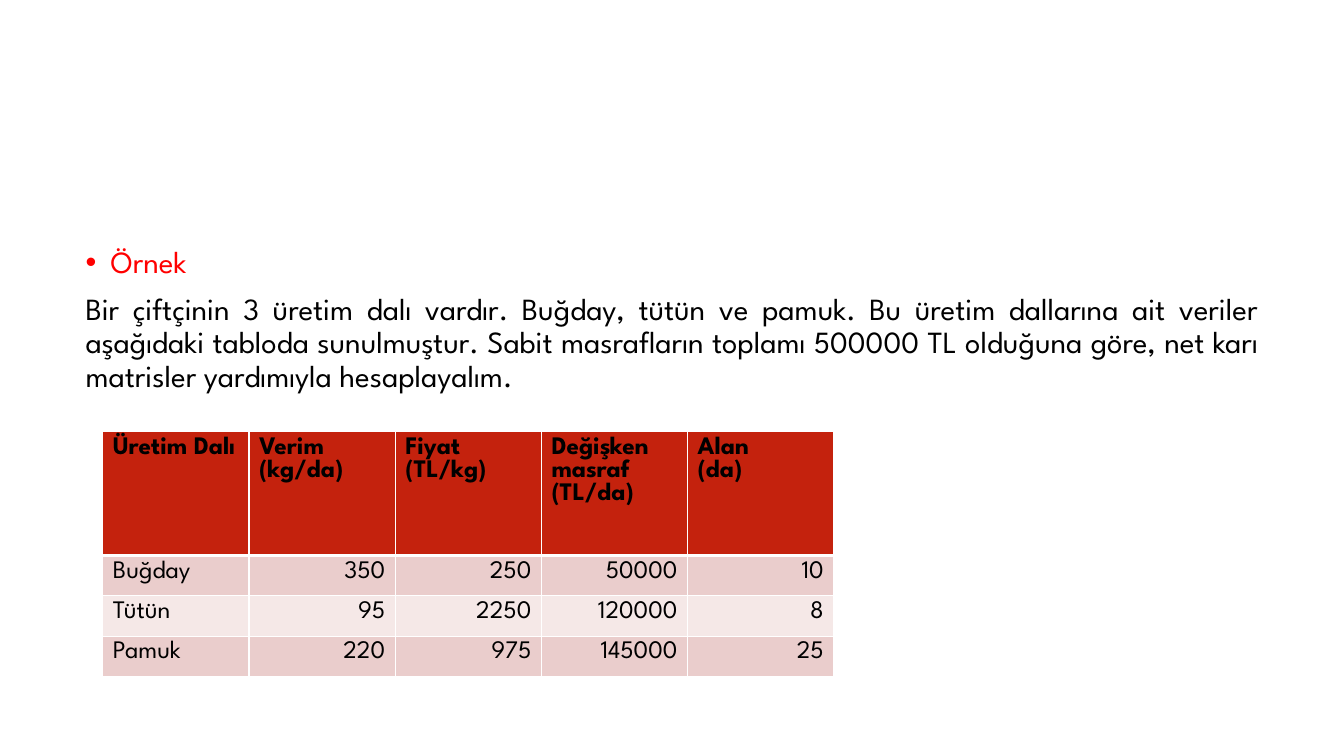
from lxml import etree
from pptx import Presentation
from pptx import util as u
from pptx.dml.color import RGBColor
from pptx.enum import text
from pptx.oxml.ns import qn

FONT = "League Spartan"
BLACK, RED, WHITE = "000000", "FF0000", "FFFFFF"
HEADER_FILL, BAND_FILLS = "C4220D", ("EACDCC", "F5E8E7")
COLUMN, HEADER_ROW, DATA_ROW = 1.45, 1.23, 0.4

PROBLEM = (
    "Bir çiftçinin 3 üretim dalı vardır. Buğday, tütün ve pamuk. "
    "Bu üretim dallarına ait veriler aşağıdaki tabloda sunulmuştur. "
    "Sabit masrafların toplamı 500000 TL olduğuna göre, net karı "
    "matrisler yardımıyla hesaplayalım."
)
FARM_DATA = [
    ["Üretim Dalı", "Verim\n(kg/da)", "Fiyat\n(TL/kg)",
     "Değişken masraf\n(TL/da)", "Alan\n(da)"],
    ["Buğday", "350", "250", "50000", "10"],
    ["Tütün", "95", "2250", "120000", "8"],
    ["Pamuk", "220", "975", "145000", "25"],
]


def color(value):
    return RGBColor.from_string(value)


def apply(target, settings):
    for name, value in settings.items():
        setattr(target, name, value)


def style_font(paragraph, size, ink=BLACK, bold=False):
    apply(paragraph.font, {"name": FONT, "size": u.Pt(size), "bold": bold})
    paragraph.font.color.rgb = color(ink)


def add_bullet(paragraph, indent):
    properties = paragraph._p.get_or_add_pPr()
    properties.set("marL", str(u.Inches(indent)))
    properties.set("indent", str(-u.Inches(indent)))
    font = etree.SubElement(properties, qn("a:buFont"))
    font.set("typeface", "Arial")
    etree.SubElement(properties, qn("a:buChar")).set("char", "•")


def add_example(slide):
    box = slide.shapes.add_textbox(
        *map(u.Inches, (0.75, 2.4, 11.83, 4.4)))
    frame = box.text_frame
    frame.word_wrap = True
    heading, problem = frame.paragraphs[0], frame.add_paragraph()
    heading.text, problem.text = "Örnek", PROBLEM
    heading.line_spacing = 0.9
    apply(problem, {"line_spacing": 0.9, "space_before": u.Pt(10),
                    "alignment": text.PP_ALIGN.JUSTIFY})
    add_bullet(heading, 0.25)
    style_font(heading, 22, RED)
    style_font(problem, 22)


def add_borders(cell, widths):
    """Draw white edges; widths maps a side (L, R, T, B) to points."""
    properties = cell._tc.get_or_add_tcPr()
    for position, (side, width) in enumerate(widths.items()):
        line = etree.Element(qn(f"a:ln{side}"), w=str(u.Pt(width)))
        fill = etree.SubElement(line, qn("a:solidFill"))
        etree.SubElement(fill, qn("a:srgbClr")).set("val", WHITE)
        properties.insert(position, line)


def fill_cell(cell, content, row, column):
    header = row == 0
    cell.text = content
    cell.fill.solid()
    cell.fill.fore_color.rgb = color(
        HEADER_FILL if header else BAND_FILLS[(row - 1) % 2])
    number = not header and column > 0
    for paragraph in cell.text_frame.paragraphs:
        paragraph.alignment = (
            text.PP_ALIGN.RIGHT if number else text.PP_ALIGN.LEFT)
        style_font(paragraph, 18, bold=header)
    add_borders(cell, {"L": 1, "R": 1, "T": 3 if row == 1 else 1,
                       "B": 3 if header else 1})


def add_farm_table(slide, left, top):
    heights = [HEADER_ROW] + [DATA_ROW] * (len(FARM_DATA) - 1)
    columns = len(FARM_DATA[0])
    table = slide.shapes.add_table(
        len(heights), columns, u.Inches(left), u.Inches(top),
        u.Inches(COLUMN * columns), u.Inches(sum(heights))).table
    for row, height in zip(table.rows, heights):
        row.height = u.Inches(height)
    for row, record in enumerate(FARM_DATA):
        for column, content in enumerate(record):
            fill_cell(table.cell(row, column), content, row, column)


def main():
    deck = Presentation()
    apply(deck, {"slide_width": u.Inches(13.33),
                 "slide_height": u.Inches(7.5)})
    slide = deck.slides.add_slide(deck.slide_layouts[6])
    add_example(slide)
    add_farm_table(slide, 1.02, 4.28)
    deck.save("out.pptx")


if __name__ == "__main__":
    main()
